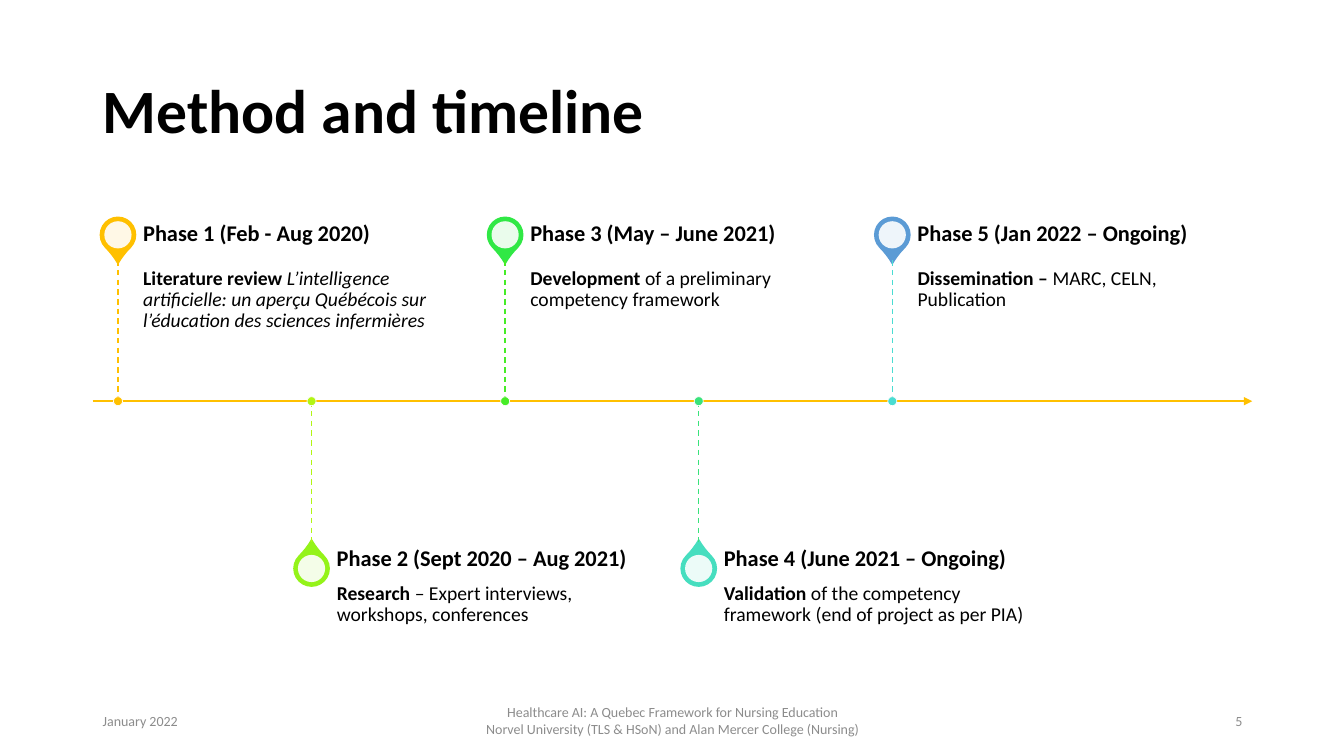
"""Build the method and timeline slide with five alternating phases."""
from lxml import etree
from pptx import Presentation
from pptx.dml.color import RGBColor
from pptx.enum.dml import MSO_LINE
from pptx.enum.shapes import MSO_CONNECTOR, MSO_SHAPE
from pptx.enum.text import MSO_ANCHOR, PP_ALIGN
from pptx.oxml.ns import qn
from pptx.util import Inches, Pt

BLACK = RGBColor(0x00, 0x00, 0x00)
WHITE = RGBColor(0xFF, 0xFF, 0xFF)
GRAY = RGBColor(0x8C, 0x8C, 0x8C)
GOLD = RGBColor(0xFF, 0xC0, 0x00)
LIME = RGBColor(0x94, 0xF3, 0x19)
LIGHT_LIME = RGBColor(0xB2, 0xF5, 0x14)
GREEN = RGBColor(0x30, 0xE8, 0x45)
BRIGHT_GREEN = RGBColor(0x46, 0xEC, 0x27)
TEAL = RGBColor(0x46, 0xDE, 0xBF)
SEA_GREEN = RGBColor(0x39, 0xE3, 0x7B)
BLUE = RGBColor(0x5B, 0x9B, 0xD5)
CYAN = RGBColor(0x4A, 0xDC, 0xD2)

AXIS_Y = 3.98
FIRST_X = 1.17
PHASE_GAP = 1.92
STEM = 1.4

PHASES = [
    ("Phase 1\u00a0(Feb - Aug 2020)", "Literature review ",
     "L’intelligence artificielle: un aperçu Québécois sur l’éducation des sciences infermières",
     True, GOLD, GOLD),
    ("Phase 2 (Sept 2020 – Aug 2021)", "Research",
     " – Expert interviews, workshops, conferences", False, LIME, LIGHT_LIME),
    ("Phase 3 (May – June 2021)", "Development ",
     "of a preliminary competency framework", False, GREEN, BRIGHT_GREEN),
    ("Phase 4 (June 2021 – Ongoing)", "Validation",
     " of the competency framework (end of project as per PIA)", False, TEAL, SEA_GREEN),
    ("Phase 5 (Jan 2022 – Ongoing)", "Dissemination – ",
     "MARC, CELN, Publication", False, BLUE, CYAN),
]

FOOTERS = [
    (0.92, 3, PP_ALIGN.LEFT, ["January 2022"]),
    (4.42, 4.5, PP_ALIGN.CENTER, [
        "Healthcare AI: A Quebec Framework for Nursing Education",
        "Norvel University (TLS & HSoN) and Alan Mercer College (Nursing)"]),
    (9.42, 3, PP_ALIGN.RIGHT, ["5"]),
]


def write_text(shape, paragraphs, size, color=BLACK, align=PP_ALIGN.LEFT,
               anchor=MSO_ANCHOR.MIDDLE, insets=(0.1, 0.05, 0.1, 0.05), spacing=0.9):
    """Fill a shape with paragraphs made of (text, bold, italic) runs."""
    frame = shape.text_frame
    frame.word_wrap = True
    frame.vertical_anchor = anchor
    frame.margin_left, frame.margin_top, frame.margin_right, frame.margin_bottom = map(Inches, insets)
    for index, runs in enumerate(paragraphs):
        paragraph = frame.add_paragraph() if index else frame.paragraphs[0]
        paragraph.alignment = align
        paragraph.line_spacing = spacing
        for text, bold, italic in runs:
            run = paragraph.add_run()
            run.text = text
            run.font.name = "Calibri"
            run.font.size = Pt(size)
            run.font.color.rgb = color
            run.font.bold = bold
            run.font.italic = italic


def add_line(start, end, color, width):
    """Draw a straight line without a shadow."""
    connector = slide.shapes.add_connector(
        MSO_CONNECTOR.STRAIGHT, *map(Inches, (*start, *end)))
    connector.line.color.rgb = color
    connector.line.width = Pt(width)
    etree.SubElement(connector._element.spPr, qn("a:effectLst"))
    return connector


presentation = Presentation()
presentation.slide_width = Inches(13.33)
presentation.slide_height = Inches(7.5)
slide = presentation.slides.add_slide(presentation.slide_layouts[5])

title = slide.shapes.title
title.left, title.top, title.width, title.height = map(Inches, (0.92, 0.4, 11.5, 1.45))
write_text(title, [[("Method and timeline", True, False)]], 44)

axis = add_line((0.92, AXIS_Y), (12.42, AXIS_Y), GOLD, 1.5)
etree.SubElement(axis.line._get_or_add_ln(), qn("a:tailEnd"), type="triangle")

for index, (heading, lead, detail, italic, pin_color, stem_color) in enumerate(PHASES):
    x = FIRST_X + index * PHASE_GAP
    above = index % 2 == 0
    pin_y = 2.33 if above else 5.64
    text_x = x + 0.25

    pin = slide.shapes.add_shape(
        MSO_SHAPE.TEAR, *map(Inches, (x - 0.175, pin_y - 0.175, 0.35, 0.35)))
    pin.adjustments[0] = 1.15
    pin.rotation = 135 if above else 315
    pin.line.width = Pt(1)
    hole = slide.shapes.add_shape(
        MSO_SHAPE.OVAL, *map(Inches, (x - 0.135, pin_y - 0.135, 0.27, 0.27)))

    body = slide.shapes.add_textbox(
        *map(Inches, (text_x, 2.58 if above else 4.88, 3.19, 1.41)))
    write_text(body, [[(lead, True, False), (detail, False, italic)]], 14,
               anchor=MSO_ANCHOR.TOP if above else MSO_ANCHOR.BOTTOM,
               insets=(0, 0.08, 0.08, 0.11) if above else (0, 0.11, 0, 0.08))
    label = slide.shapes.add_textbox(
        *map(Inches, (text_x, 2.08 if above else 5.3, 3.33, 0.49)))
    write_text(label, [[(heading, True, False)]], 16, insets=(0, 0, 0.1, 0))

    stem_top = AXIS_Y - STEM if above else AXIS_Y
    stem = add_line((x, stem_top), (x, stem_top + STEM), stem_color, 1)
    stem.line.dash_style = MSO_LINE.DASH

    dot = slide.shapes.add_shape(
        MSO_SHAPE.OVAL, *map(Inches, (x - 0.045, AXIS_Y - 0.045, 0.09, 0.09)))
    dot.line.width = Pt(0.5)

    for shape, fill, outline in ((pin, pin_color, pin_color), (hole, WHITE, None),
                                 (dot, stem_color, WHITE)):
        shape.shadow.inherit = False
        shape.fill.solid()
        shape.fill.fore_color.rgb = fill
        if outline is None:
            shape.line.fill.background()
        else:
            shape.line.color.rgb = outline
    white = hole._element.spPr.find(qn("a:solidFill")).find(qn("a:srgbClr"))
    etree.SubElement(white, qn("a:alpha"), val="90000")

for left, width, align, lines in FOOTERS:
    footer = slide.shapes.add_textbox(*map(Inches, (left, 6.95, width, 0.4)))
    write_text(footer, [[(line, False, False)] for line in lines], 10,
               color=GRAY, align=align, spacing=1.0)

presentation.save("out.pptx")
